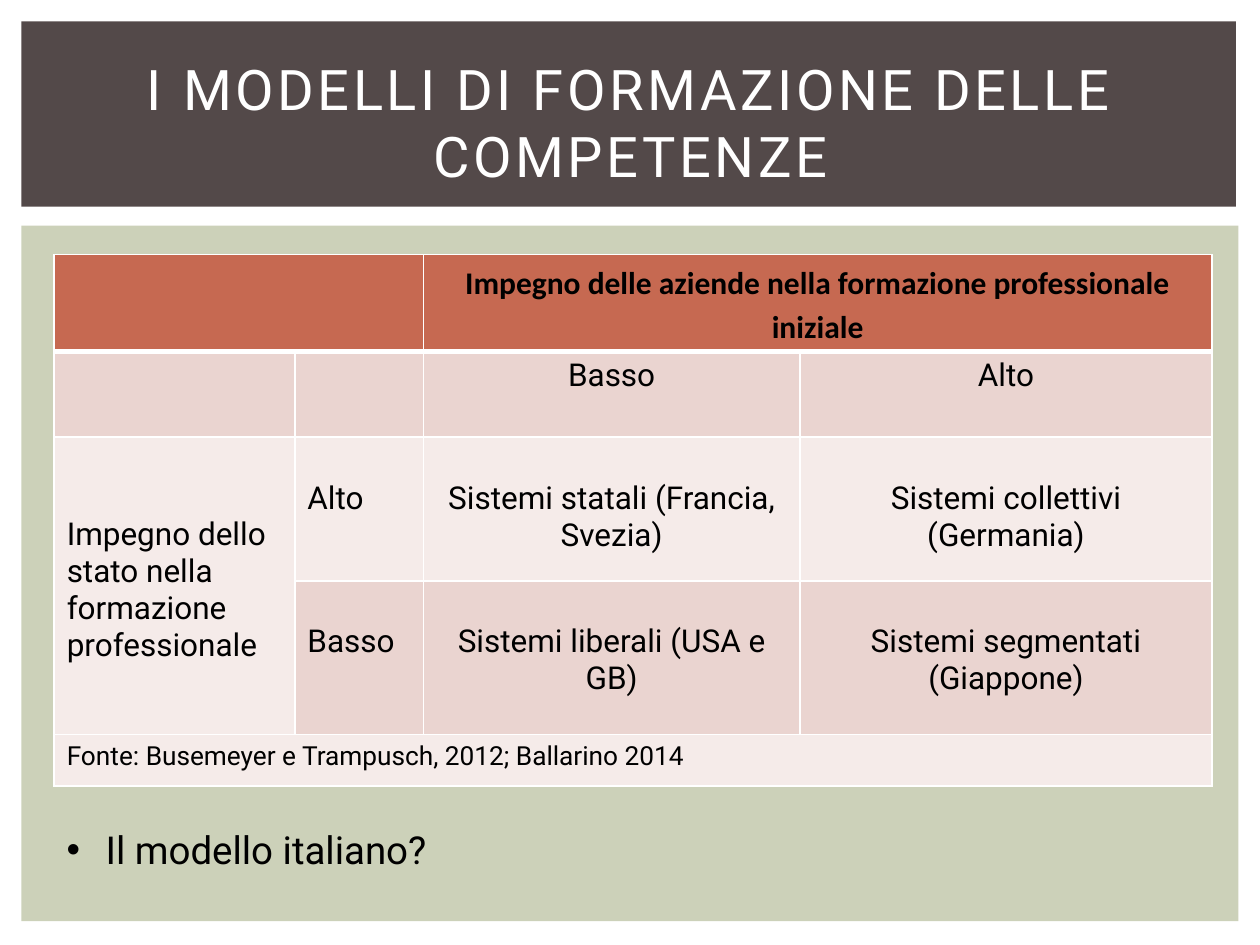
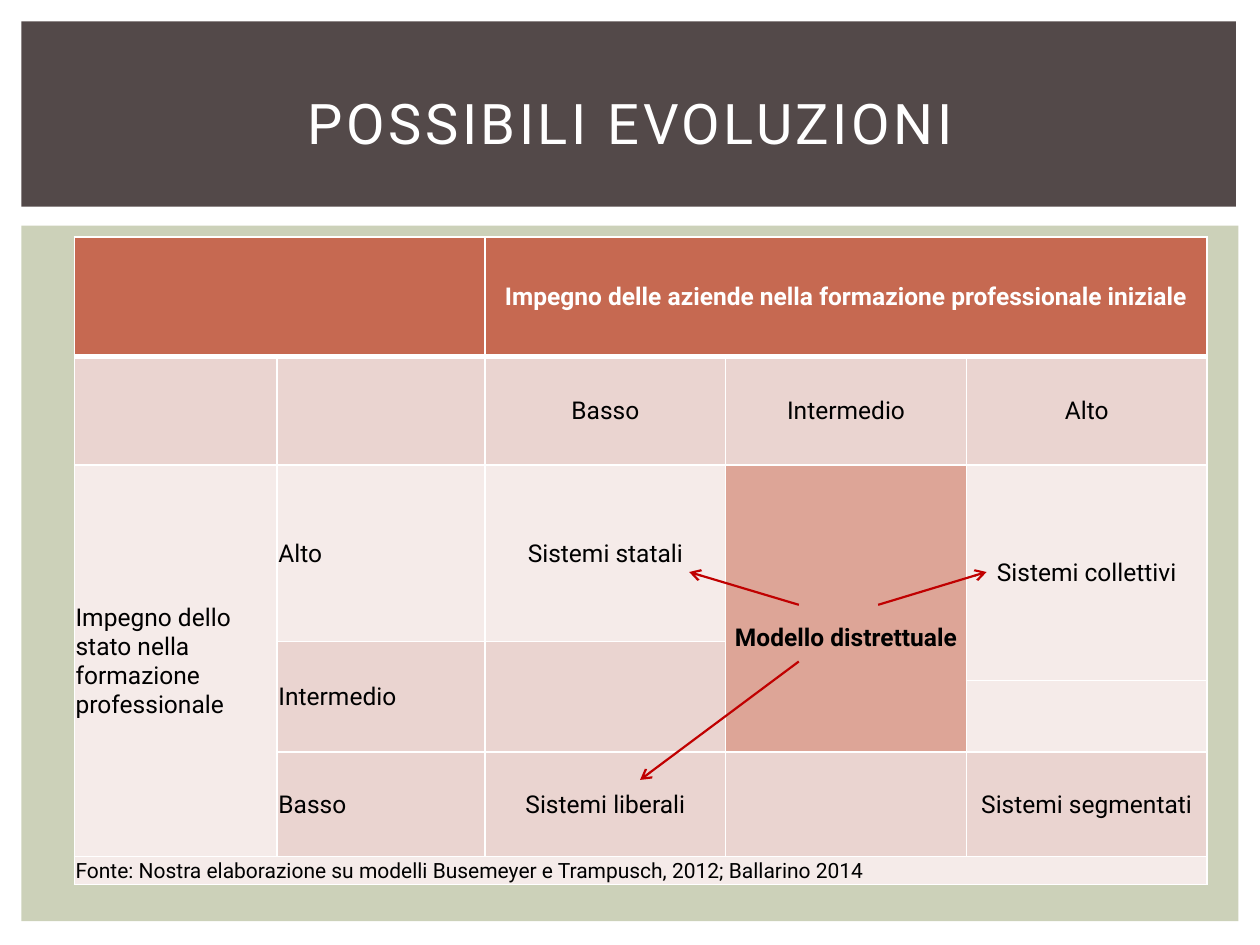
from dataclasses import dataclass
from typing import Optional

from lxml.etree import SubElement
from pptx import Presentation
from pptx.dml.color import RGBColor
from pptx.enum.shapes import MSO_CONNECTOR, MSO_SHAPE
from pptx.enum.text import MSO_ANCHOR, PP_ALIGN
from pptx.oxml.ns import qn
from pptx.slide import Slide
from pptx.table import Table, _Cell
from pptx.text.text import TextFrame, _Paragraph
from pptx.util import Inches, Pt


@dataclass(frozen=True)
class Theme:
    title_band: str = "534949"
    body_panel: str = "CCD1B9"
    header: str = "C66951"
    dark_row: str = "EAD4D0"
    light_row: str = "F5EBE9"
    highlight: str = "DDA597"
    arrow: str = "C00000"
    white: str = "FFFFFF"
    black: str = "000000"
    font: str = "Roboto"
    header_font: str = "Calibri"
    title_size: float = 32
    bullet_size: float = 22
    large_size: float = 18
    source_size: float = 15
    small_size: float = 14
    small_source_size: float = 12
    thin_border: float = 1
    thick_border: float = 3
    arrow_width: float = 1.25


THEME = Theme()


@dataclass(frozen=True)
class Box:
    left: float
    top: float
    width: float
    height: float

    def inches(self) -> tuple:
        return tuple(Inches(n) for n in (self.left, self.top, self.width, self.height))


@dataclass(frozen=True)
class Band:
    box: Box
    color: str


@dataclass(frozen=True)
class Entry:
    row: int
    column: int
    text: str = ""
    rows: int = 1
    columns: int = 1
    centered: bool = True
    bold: bool = False
    color: str = THEME.black
    font: str = THEME.font
    size: Optional[float] = None
    fill: Optional[str] = None
    line_spacing: Optional[float] = None
    anchor: Optional[MSO_ANCHOR] = None
    space_above: float = 0


@dataclass(frozen=True)
class Matrix:
    left: float
    top: float
    columns: tuple[float, ...]
    rows: tuple[float, ...]
    size: float
    anchor: MSO_ANCHOR
    margins: tuple[float, float, float, float]
    entries: tuple[Entry, ...]


@dataclass(frozen=True)
class Arrow:
    start: tuple[float, float]
    end: tuple[float, float]


BANDS = (
    Band(Box(0.17, 1.79, 9.66, 5.52), THEME.body_panel),
    Band(Box(0.17, 0.17, 9.64, 1.47), THEME.title_band),
)
TITLE_BOX = Box(0.42, 0.39, 9.17, 1.15)
BULLET_BOX = Box(0.43, 6.51, 8.82, 0.47)
COMPANIES = "Impegno delle aziende nella formazione professionale iniziale"
STATE = "Impegno dello stato nella formazione professionale"
ONE_LINE = 0.29

MODELS = Matrix(
    0.43, 2.02, (1.91, 1.02, 2.99, 3.27), (0.77, 0.68, 1.14, 1.22, 0.41),
    THEME.large_size, MSO_ANCHOR.TOP, (0.1, 0.05, 0.1, 0.05),
    (
        Entry(0, 0, columns=2),
        Entry(0, 2, COMPANIES, columns=2, bold=True, font=THEME.header_font,
              line_spacing=1.15, anchor=MSO_ANCHOR.MIDDLE),
        Entry(1, 2, "Basso"),
        Entry(1, 3, "Alto"),
        Entry(2, 0, STATE, rows=2, centered=False, space_above=2 * ONE_LINE),
        Entry(2, 1, "Alto", centered=False, space_above=ONE_LINE),
        Entry(2, 2, "Sistemi statali (Francia, Svezia)", space_above=ONE_LINE),
        Entry(2, 3, "Sistemi collettivi (Germania)", space_above=ONE_LINE),
        Entry(3, 1, "Basso", centered=False, space_above=ONE_LINE),
        Entry(3, 2, "Sistemi liberali (USA e GB)", space_above=ONE_LINE),
        Entry(3, 3, "Sistemi segmentati (Giappone)", space_above=ONE_LINE),
        Entry(4, 0, "Fonte: Busemeyer e Trampusch, 2012; Ballarino 2014",
              columns=4, centered=False, size=THEME.source_size),
    ),
)

EVOLUTIONS = Matrix(
    0.59, 1.88, (1.61, 1.65, 1.91, 1.91, 1.91),
    (0.95, 0.86, 1.4, 0.31, 0.57, 0.83, 0.22),
    THEME.small_size, MSO_ANCHOR.MIDDLE, (0.01, 0.01, 0.01, 0),
    (
        Entry(0, 0, columns=2),
        Entry(0, 2, COMPANIES, columns=3, bold=True, color=THEME.white),
        Entry(1, 2, "Basso"),
        Entry(1, 3, "Intermedio"),
        Entry(1, 4, "Alto"),
        Entry(2, 0, STATE, rows=4, centered=False),
        Entry(2, 1, "Alto", centered=False),
        Entry(2, 2, "Sistemi statali"),
        Entry(2, 3, "Modello distrettuale", rows=3, bold=True,
              fill=THEME.highlight, space_above=0.46),
        Entry(2, 4, "Sistemi collettivi", rows=2),
        Entry(3, 1, "Intermedio", rows=2, centered=False),
        Entry(3, 2, rows=2),
        Entry(5, 1, "Basso", centered=False),
        Entry(5, 2, "Sistemi liberali"),
        Entry(5, 4, "Sistemi segmentati"),
        Entry(6, 0, "Fonte: Nostra elaborazione su modelli Busemeyer e Trampusch, 2012; Ballarino 2014",
              columns=5, centered=False, size=THEME.small_source_size),
    ),
)

ARROWS = (
    Arrow((6.34, 5.25), (5.08, 6.19)),
    Arrow((6.34, 4.8), (5.47, 4.54)),
    Arrow((6.97, 4.8), (7.83, 4.54)),
)


def rgb(color: str) -> RGBColor:
    return RGBColor.from_string(color)


def write_text(frame: TextFrame, text: str, *, size: float, color: str = THEME.black,
               font: str = THEME.font, bold: bool = False, centered: bool = False,
               line_spacing: Optional[float] = None, tracking: float = 0) -> _Paragraph:
    frame.word_wrap = True
    paragraph = frame.paragraphs[0]
    paragraph.alignment = PP_ALIGN.CENTER if centered else PP_ALIGN.LEFT
    if line_spacing:
        paragraph.line_spacing = line_spacing
    run = paragraph.add_run()
    run.text = text
    run.font.name = font
    run.font.size = Pt(size)
    run.font.bold = bold
    run.font.color.rgb = rgb(color)
    if tracking:
        run._r.get_or_add_rPr().set("spc", str(int(tracking * 100)))
    return paragraph


def add_base_slide(presentation: Presentation, title: str) -> Slide:
    slide = presentation.slides.add_slide(presentation.slide_layouts[6])
    for band in BANDS:
        shape = slide.shapes.add_shape(MSO_SHAPE.RECTANGLE, *band.box.inches())
        shape.shadow.inherit = False
        shape.fill.solid()
        shape.fill.fore_color.rgb = rgb(band.color)
        shape.line.fill.background()
    frame = slide.shapes.add_textbox(*TITLE_BOX.inches()).text_frame
    frame.vertical_anchor = MSO_ANCHOR.MIDDLE
    write_text(frame, title, size=THEME.title_size, color=THEME.white,
               centered=True, tracking=2)
    return slide


def set_borders(cell: _Cell, row: int) -> None:
    properties = cell._tc.get_or_add_tcPr()
    for side in "LRTB":
        thick = (row, side) in ((0, "B"), (1, "T"))
        width = THEME.thick_border if thick else THEME.thin_border
        line = SubElement(properties, qn(f"a:ln{side}"), w=str(Pt(width)))
        fill = SubElement(line, qn("a:solidFill"))
        SubElement(fill, qn("a:srgbClr"), val=THEME.white)


def row_fill(row: int) -> str:
    if row == 0:
        return THEME.header
    return THEME.dark_row if row % 2 else THEME.light_row


def fill_cell(cell: _Cell, color: str) -> None:
    cell.fill.solid()
    cell.fill.fore_color.rgb = rgb(color)


def style_cells(table: Table, matrix: Matrix) -> None:
    filled = {(entry.row, entry.column) for entry in matrix.entries if entry.text}
    for row in range(len(matrix.rows)):
        for column in range(len(matrix.columns)):
            cell = table.cell(row, column)
            set_borders(cell, row)
            fill_cell(cell, row_fill(row))
            cell.vertical_anchor = matrix.anchor
            (cell.margin_left, cell.margin_top, cell.margin_right,
             cell.margin_bottom) = (Inches(margin) for margin in matrix.margins)
            if (row, column) not in filled:
                paragraph = cell.text_frame.paragraphs[0]
                SubElement(paragraph._p, qn("a:endParaRPr"),
                           sz=str(int(THEME.small_source_size * 100)))


def add_matrix(slide: Slide, matrix: Matrix) -> None:
    box = Box(matrix.left, matrix.top, sum(matrix.columns), sum(matrix.rows))
    table = slide.shapes.add_table(len(matrix.rows), len(matrix.columns), *box.inches()).table
    table.first_row = table.horz_banding = False
    for column, width in zip(table.columns, matrix.columns):
        column.width = Inches(width)
    for row, height in zip(table.rows, matrix.rows):
        row.height = Inches(height)
    style_cells(table, matrix)
    for entry in matrix.entries:
        cell = table.cell(entry.row, entry.column)
        if entry.rows * entry.columns > 1:
            cell.merge(table.cell(entry.row + entry.rows - 1,
                                  entry.column + entry.columns - 1))
        if entry.fill:
            fill_cell(cell, entry.fill)
        if entry.anchor is not None:
            cell.vertical_anchor = entry.anchor
            cell.margin_left = cell.margin_right = Inches(0.05)
            cell.margin_top = cell.margin_bottom = 0
        cell.margin_top += Inches(entry.space_above)
        if entry.text:
            write_text(cell.text_frame, entry.text, size=entry.size or matrix.size,
                       color=entry.color, font=entry.font, bold=entry.bold,
                       centered=entry.centered, line_spacing=entry.line_spacing)


def add_bullet(slide: Slide, text: str) -> None:
    frame = slide.shapes.add_textbox(*BULLET_BOX.inches()).text_frame
    paragraph = write_text(frame, text, size=THEME.bullet_size)
    properties = paragraph._p.get_or_add_pPr()
    indent = Inches(0.31)
    properties.set("marL", str(indent))
    properties.set("indent", str(-indent))
    SubElement(properties, qn("a:buFont"), typeface="Arial")
    SubElement(properties, qn("a:buChar"), char="•")


def add_arrow(slide: Slide, arrow: Arrow) -> None:
    points = (Inches(value) for value in arrow.start + arrow.end)
    connector = slide.shapes.add_connector(MSO_CONNECTOR.STRAIGHT, *points)
    connector.line.color.rgb = rgb(THEME.arrow)
    connector.line.width = Pt(THEME.arrow_width)
    SubElement(connector.line._get_or_add_ln(), qn("a:tailEnd"), type="arrow")
    SubElement(connector._element.spPr, qn("a:effectLst"))


def main() -> None:
    presentation = Presentation()
    presentation.slide_width = Inches(10)
    presentation.slide_height = Inches(7.5)

    models = add_base_slide(presentation, "I MODELLI DI FORMAZIONE DELLE COMPETENZE")
    add_matrix(models, MODELS)
    add_bullet(models, "Il modello italiano?")

    evolutions = add_base_slide(presentation, "POSSIBILI EVOLUZIONI")
    add_matrix(evolutions, EVOLUTIONS)
    for arrow in ARROWS:
        add_arrow(evolutions, arrow)

    presentation.save("out.pptx")


if __name__ == "__main__":
    main()
